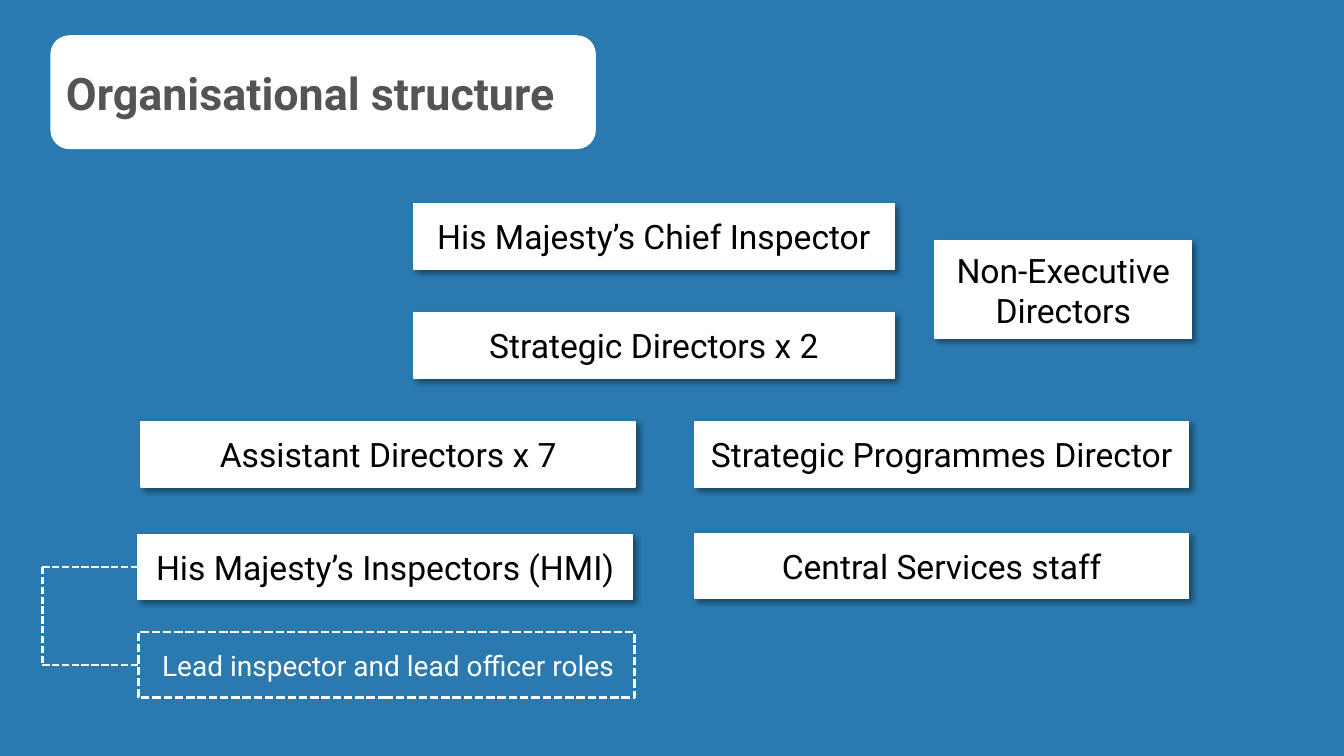
import pptx
import pptx.util
import pptx.dml.color
import pptx.enum.dml
import pptx.enum.shapes
import pptx.enum.text
import pptx.oxml
import pptx.oxml.ns

Inches, Pt = pptx.util.Inches, pptx.util.Pt
SHAPE = pptx.enum.shapes.MSO_SHAPE
ALIGN = pptx.enum.text.PP_ALIGN
ANCHOR = pptx.enum.text.MSO_ANCHOR

COLORS = {"back": "2A7AB0", "white": "FFFFFF", "title": "545454", "text": "000000"}

TITLE = ("Organisational structure", (0.5, 0.35, 5.41, 1.13))
BOX_H = 0.65
ROLES = [
    ("His Majesty’s Chief Inspector", 4.1, 2.02, 4.77, BOX_H),
    ("Strategic Directors x 2", 4.1, 3.1, 4.77, BOX_H),
    ("Assistant Directors x 7", 1.4, 4.18, 4.9, BOX_H),
    ("Strategic Programmes Director", 6.89, 4.18, 4.9, BOX_H),
    ("His Majesty’s Inspectors (HMI)", 1.37, 5.3, 4.9, BOX_H),
    ("Central Services staff", 6.89, 5.29, 4.9, BOX_H),
    ("Non-Executive Directors", 9.27, 2.39, 2.55, 0.97),
]
LEAD = ("Lead inspector and lead officer roles", (1.51, 6.38, 4.83, 0.44))
LEAD_FRAME = (1.37, 6.27, 4.92, BOX_H)
BRACKET_X = 0.42

FORMATS = {
    "title": {"size": Pt(32), "name": "Roboto", "bold": True},
    "role": {"size": Pt(24), "name": "Roboto"},
    "lead": {"size": Pt(20), "name": "Roboto"},
}
SHADOW = (
    '<a:outerShdw %s blurRad="%d" dist="%d" dir="2700000" algn="tl" rotWithShape="0">'
    '<a:srgbClr val="%s"><a:alpha val="40000"/></a:srgbClr></a:outerShdw>'
    % (pptx.oxml.ns.nsdecls("a"), Pt(4), Pt(3), COLORS["text"])
)


def rgb(name):
    return pptx.dml.color.RGBColor.from_string(COLORS[name])


def write(s, text, style, color, align):
    tf = s.text_frame
    tf.word_wrap = True
    p = tf.paragraphs[0]
    p.alignment = align
    r = p.add_run()
    r.text = text
    for key, value in FORMATS[style].items():
        setattr(r.font, key, value)
    r.font.color.rgb = rgb(color)


def add_box(slide, kind, place, fill=None):
    s = slide.shapes.add_shape(kind, *map(Inches, place))
    s.shadow.inherit = False
    if fill:
        s.fill.solid()
        s.fill.fore_color.rgb = rgb(fill)
    else:
        s.fill.background()
    s.text_frame.vertical_anchor = ANCHOR.MIDDLE
    return s


def set_line(s, width, dashed=False):
    s.line.color.rgb = rgb("white")
    s.line.width = Pt(width)
    if dashed:
        s.line.dash_style = pptx.enum.dml.MSO_LINE.SQUARE_DOT


def add_dash(slide, start, end):
    s = slide.shapes.add_connector(pptx.enum.shapes.MSO_CONNECTOR.STRAIGHT, *start, *end)
    set_line(s, 1.75, dashed=True)
    s._element.spPr.append(pptx.oxml.parse_xml("<a:effectLst %s/>" % pptx.oxml.ns.nsdecls("a")))
    return s


def left_middle(s):
    return s.left, s.top + s.height // 2


def main():
    """Build the organisational structure slide."""
    prs = pptx.Presentation()
    prs.slide_width, prs.slide_height = Inches(13.33), Inches(7.5)
    slide = prs.slides.add_slide(prs.slide_layouts[6])
    slide.background.fill.solid()
    slide.background.fill.fore_color.rgb = rgb("back")

    text, place = TITLE
    s = add_box(slide, SHAPE.ROUNDED_RECTANGLE, place, "white")
    s.line.fill.background()
    write(s, text, "title", "title", ALIGN.LEFT)

    roles = {}
    for text, *place in ROLES:
        s = add_box(slide, SHAPE.RECTANGLE, place, "white")
        set_line(s, 1)
        s._element.spPr.find(pptx.oxml.ns.qn("a:effectLst")).append(pptx.oxml.parse_xml(SHADOW))
        write(s, text, "role", "text", ALIGN.CENTER)
        roles[text] = s

    text, place = LEAD
    s = slide.shapes.add_textbox(*map(Inches, place))
    write(s, text, "lead", "white", ALIGN.LEFT)
    s.text_frame.auto_size = pptx.enum.text.MSO_AUTO_SIZE.SHAPE_TO_FIT_TEXT
    frame = add_box(slide, SHAPE.RECTANGLE, LEAD_FRAME)
    set_line(frame, 2, dashed=True)

    corners = []
    for box in (roles["His Majesty’s Inspectors (HMI)"], frame):
        side = left_middle(box)
        corner = (Inches(BRACKET_X), side[1])
        add_dash(slide, side, corner).begin_connect(box, 1)
        corners.append(corner)
    add_dash(slide, *corners)

    prs.save("out.pptx")


if __name__ == "__main__":
    main()
